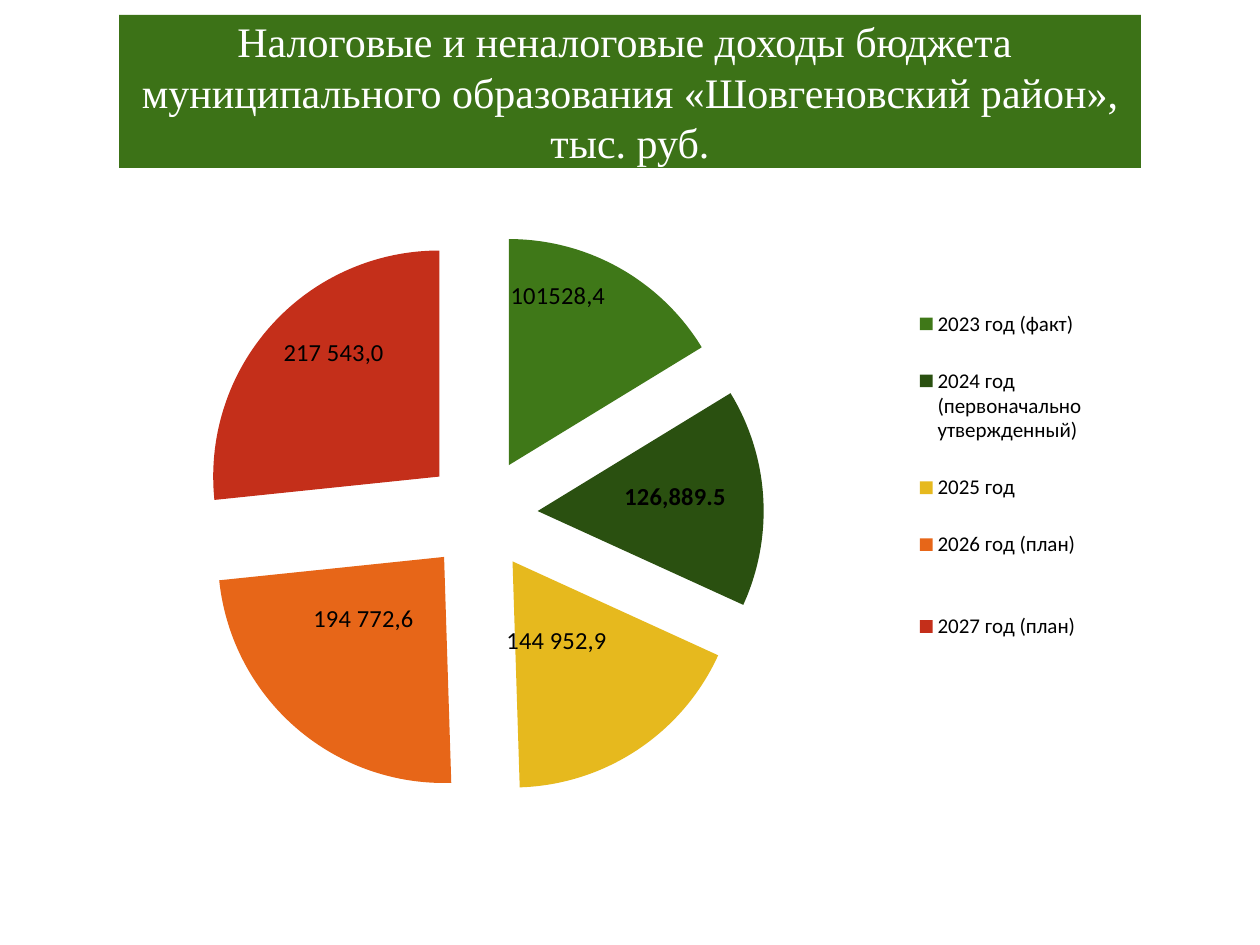
from lxml.etree import SubElement
from pptx import Presentation
from pptx.chart.data import CategoryChartData
from pptx.dml.color import RGBColor
from pptx.enum.chart import XL_CHART_TYPE, XL_LABEL_POSITION, XL_LEGEND_POSITION
from pptx.enum.text import MSO_ANCHOR, MSO_AUTO_SIZE, PP_ALIGN
from pptx.oxml import parse_xml
from pptx.oxml.ns import nsdecls, qn
from pptx.util import Pt

PX = 914400 // 126  # EMU per pixel
COLORS = {"banner": "3C7217", "white": "FFFFFF", "black": "000000"}

# Category, value, slice colour, label text (None shows the value), label shift in px
INCOME = [
    ("2023 год (факт)", 132843.6, "3F7818", "101528,4", (-6, -70)),
    ("2024 год (первоначально утвержденный)", 126889.5, "2A5010", None, (25, -7)),
    ("2025 год ", 144314.1, "E6B91E", "144 952,9", (-19, -14)),
    ("2026 год (план)\n", 194772.6, "E76618", "194 772,6", (-6, -23)),
    ("2027 год (план)\n", 217543, "C42F1A", "217 543,0", (-22, -48)),
]
CHART_W, CHART_H = 1029, 595


def style_font(font, name, size, color, bold=False):
    for key, value in {"name": name, "size": Pt(size), "bold": bold}.items():
        setattr(font, key, value)
    font.color.rgb = RGBColor.from_string(color)


def manual_layout(**values):
    layout = parse_xml(f"<c:layout {nsdecls('c')}><c:manualLayout/></c:layout>")
    for tag, value in values.items():
        SubElement(layout[0], qn(f"c:{tag}")).set("val", str(value))
    return layout


prs = Presentation()
prs.slide_width, prs.slide_height = 1260 * PX, 945 * PX
slide = prs.slides.add_slide(prs.slide_layouts[5])

# Title banner
title = slide.shapes.title
for side, length in {"left": 119, "top": 15, "width": 1022, "height": 153}.items():
    setattr(title, side, length * PX)
title.fill.solid()
title.fill.fore_color.rgb = RGBColor.from_string(COLORS["banner"])
heading = title.text_frame
heading.text = ("Налоговые и неналоговые доходы бюджета \v"
                "муниципального образования «Шовгеновский район», тыс. руб.")
for key, value in {"margin_left": 0, "margin_top": 0, "margin_right": 0, "margin_bottom": 0,
                   "word_wrap": True, "vertical_anchor": MSO_ANCHOR.MIDDLE,
                   "auto_size": MSO_AUTO_SIZE.SHAPE_TO_FIT_TEXT}.items():
    setattr(heading, key, value)
heading.paragraphs[0].alignment = PP_ALIGN.CENTER
for run in heading.paragraphs[0].runs:
    style_font(run.font, "Times New Roman", 24, COLORS["white"])

# Pie of income by year
income_data = CategoryChartData(number_format="#,##0.0")
income_data.categories = [row[0] for row in INCOME]
income_data.add_series("Series 1", [row[1] for row in INCOME])
pie = slide.shapes.add_chart(XL_CHART_TYPE.PIE, 116 * PX, 220 * PX,
                             CHART_W * PX, CHART_H * PX, income_data).chart
pie.has_title = False
style_font(pie.font, "Calibri", 18, COLORS["black"])
income = pie.plots[0]
income.vary_by_categories = True

# Slices and their labels
for index, (year, amount, color, label_text, shift) in enumerate(INCOME):
    point = income.series[0].points[index]
    point.format.fill.solid()
    point.format.fill.fore_color.rgb = RGBColor.from_string(color)
    label = point.data_label
    if label_text:
        label.text_frame.text = label_text
        label_font = label.text_frame.paragraphs[0].runs[0].font
    else:
        label_font = label.font
    style_font(label_font, "Calibri", 14, COLORS["black"], bold=not label_text)
    label.position = XL_LABEL_POSITION.CENTER

# Exploded slices, shifted labels
chart_xml = pie._chartSpace
chart_xml.xpath(".//c:dPt")[0].addprevious(
    parse_xml(f'<c:explosion {nsdecls("c")} val="25"/>'))
for label_index, row in zip(chart_xml.xpath(".//c:dLbl/c:idx"), INCOME):
    dx, dy = row[4]
    label_index.addnext(manual_layout(x=round(dx / CHART_W, 3), y=round(dy / CHART_H, 3)))

# Plot area
for old_layout in chart_xml.xpath(".//c:plotArea/c:layout"):
    old_layout.getparent().remove(old_layout)
chart_xml.xpath(".//c:plotArea")[0].insert(0, manual_layout(
    layoutTarget="inner", xMode="edge", yMode="edge", x=0, y=0.02, w=0.71, h=0.95))

# Legend
pie.has_legend = True
pie.legend.position = XL_LEGEND_POSITION.RIGHT
pie.legend.include_in_layout = False
style_font(pie.legend.font, "Calibri", 12, COLORS["black"])
for old_layout in chart_xml.xpath(".//c:legend/c:layout"):
    old_layout.getparent().remove(old_layout)
chart_xml.xpath(".//c:legend/c:legendPos")[0].addnext(manual_layout(
    xMode="edge", yMode="edge", x=0.76, y=0.1, w=0.2, h=0.7))

prs.save("out.pptx")
